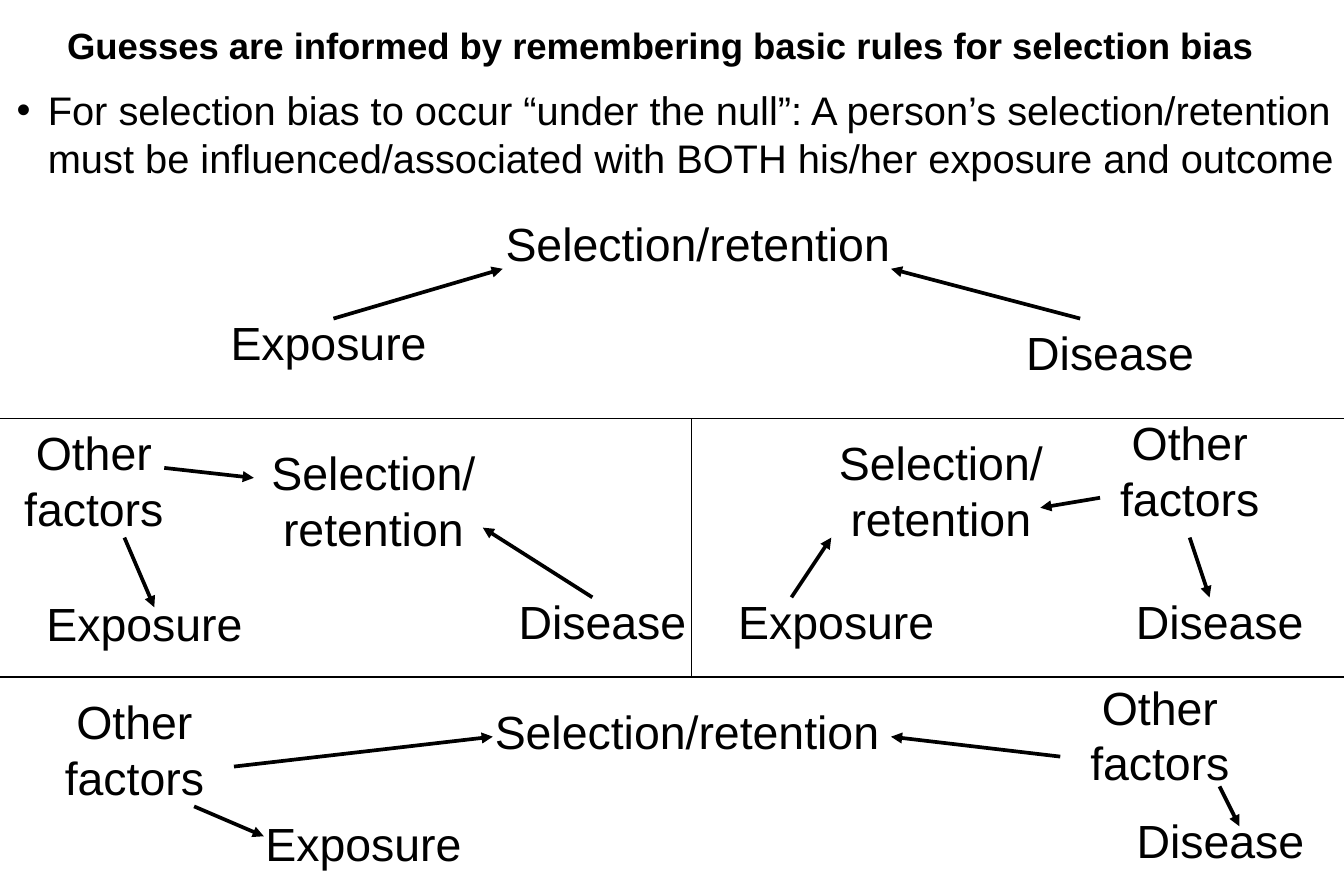
"""Build the slide on basic rules for selection bias."""
from lxml.etree import SubElement
from pptx import Presentation
from pptx.dml.color import RGBColor
from pptx.enum.shapes import MSO_CONNECTOR as Link
from pptx.enum.text import MSO_ANCHOR as Anchor, PP_ALIGN as Align
from pptx.oxml.ns import qn
from pptx.util import Pt

WIDE, HIGH = 810, 540
FONT, BLACK = "Arial", "000000"

TITLE = "Guesses are informed by remembering basic rules for selection bias"
RULE = ("For selection bias to occur “under the null”: A person’s selection/retention "
        "must be influenced/associated with BOTH his/her exposure and outcome")

# Each label: text, box width, box height, then the top centre of every use
LABELS = [
    ("Selection/retention", 282, 41, [(420.5, 126), (414, 420)]),
    ("Selection/ retention", 168, 74, [(225, 264), (567, 258)]),
    ("Other factors", 168, 74, [(56.5, 252), (717, 246), (81, 414), (699, 405.5)]),
    ("Exposure", 156, 41, [(198, 186), (87, 355), (504, 354), (219, 487.5)]),
    ("Disease", 120, 41, [(669, 192), (363, 354), (735, 354), (735.5, 486)]),
]

ARROWS = [
    (201, 192, 303, 162), (651, 192, 537, 162),
    (75, 324, 93, 366), (99, 282, 153, 288), (357, 360, 291, 318),
    (477, 360, 501, 324), (717, 324, 729, 360), (663, 300, 627, 306),
    (141, 462, 297, 444), (639, 456, 537, 444),
    (117, 486, 159, 504), (735, 474, 747, 498),
]

PANES = [(0, 408, WIDE, 408), (0, 252, WIDE, 252), (417, 252, 417, 408)]


def paint(part, shade=BLACK):
    part.rgb = RGBColor.from_string(shade)


def write(slide, text, box, size, align=Align.CENTER, anchor=Anchor.TOP):
    frame = slide.shapes.add_textbox(*map(Pt, box)).text_frame
    frame.word_wrap = True
    frame.vertical_anchor = anchor
    para = frame.paragraphs[0]
    para.text, para.alignment = text, align
    para.font.name, para.font.size = FONT, Pt(size)
    paint(para.font.color)
    return para


def bullet(para, indent):
    props = para._p.get_or_add_pPr()
    props.set("marL", str(Pt(indent)))
    props.set("indent", str(Pt(-indent)))
    SubElement(props, qn("a:buFont")).set("typeface", FONT)
    SubElement(props, qn("a:buChar")).set("char", "•")


def draw(slide, ends, width, arrow=False):
    link = slide.shapes.add_connector(Link.STRAIGHT, *map(Pt, ends))
    link.line.width = Pt(width)
    paint(link.line.color)
    if arrow:
        SubElement(link.line._get_or_add_ln(), qn("a:tailEnd")).set("type", "triangle")
    SubElement(link._element.spPr, qn("a:effectLst"))


def main():
    deck = Presentation()
    deck.slide_width, deck.slide_height = Pt(WIDE), Pt(HIGH)
    slide = deck.slides.add_slide(deck.slide_layouts[6])

    head = write(slide, TITLE, (31, 6, 734, 42), 22, anchor=Anchor.MIDDLE)
    head.font.bold = True
    bullet(write(slide, RULE, (3, 48, 834, 70), 24, Align.LEFT), 18.75)

    for ends in ARROWS:
        draw(slide, ends, 2.25, arrow=True)
    for text, width, height, spots in LABELS:
        for mid, top in spots:
            write(slide, text, (mid - width / 2, top, width, height), 28)
    for ends in PANES:
        draw(slide, ends, 0.75)

    deck.save("out.pptx")


if __name__ == "__main__":
    main()
